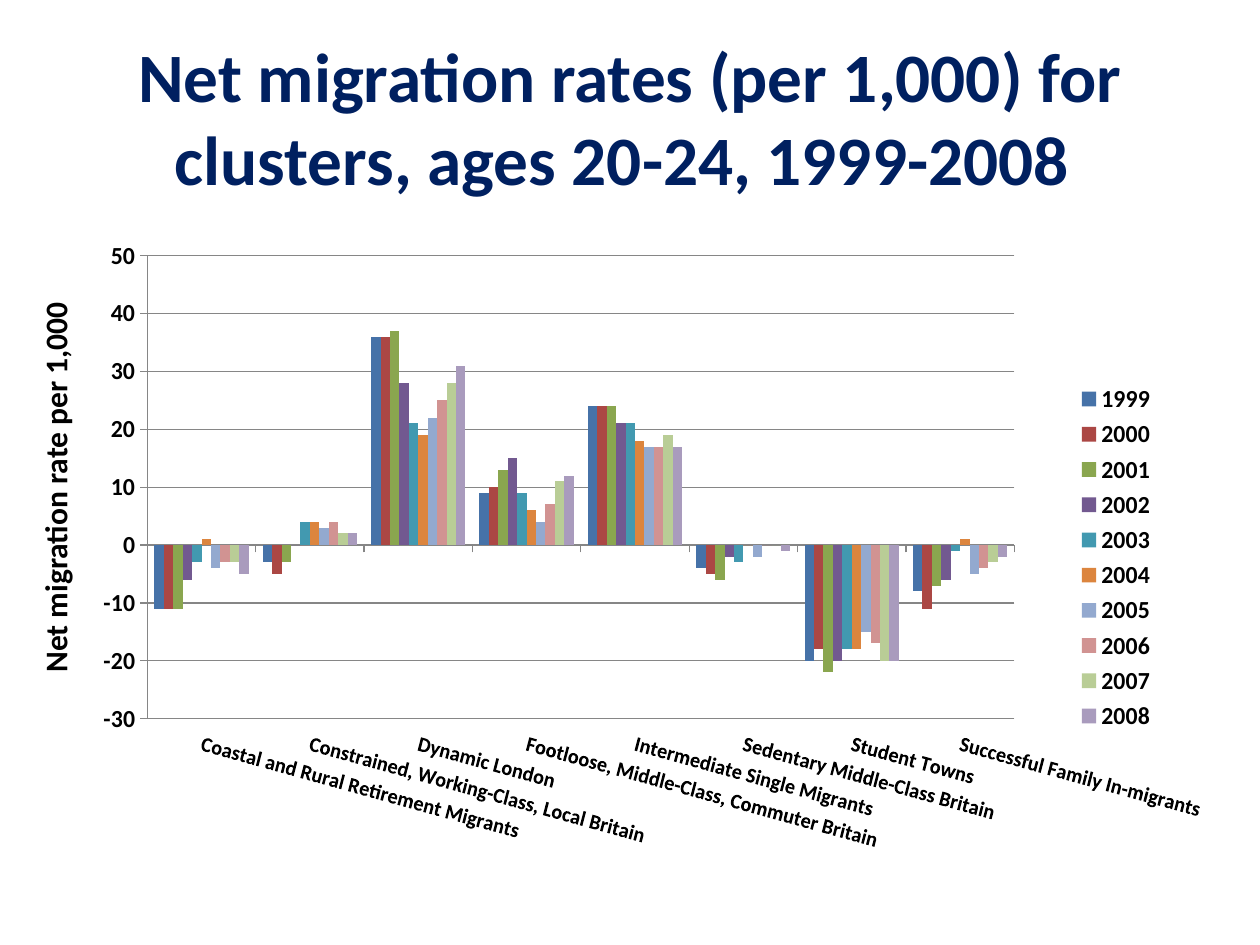
from dataclasses import dataclass

from lxml.etree import SubElement
from pptx import Presentation
from pptx.chart.chart import Chart
from pptx.chart.data import CategoryChartData
from pptx.dml.color import RGBColor
from pptx.enum.chart import XL_CHART_TYPE as ChartType
from pptx.enum.chart import XL_LEGEND_POSITION as LegendPos
from pptx.enum.chart import XL_TICK_LABEL_POSITION as LabelPos
from pptx.enum.chart import XL_TICK_MARK as Tick
from pptx.enum.text import MSO_ANCHOR as Anchor
from pptx.enum.text import PP_ALIGN as Align
from pptx.oxml.ns import qn
from pptx.util import Inches, Pt

WIDTH, HEIGHT = Inches(10), Inches(7.5)


@dataclass(frozen=True)
class Theme:
    font: str = "Calibri"
    title: str = "002060"
    text: str = "000000"
    line: str = "868686"
    title_size: float = 39.6
    axis_title_size: float = 18
    value_size: float = 14
    category_size: float = 12
    series: tuple[str, ...] = (
        "4672A8", "AB4744", "8AA64F", "725990", "4299B0",
        "DC853E", "93A9CF", "D19392", "B9CD96", "A99BBD",
    )


@dataclass(frozen=True)
class Box:
    """Left, top, width and height as shares of the slide."""
    x: float
    y: float
    w: float
    h: float

    def emu(self) -> tuple[int, ...]:
        return (int(self.x * WIDTH), int(self.y * HEIGHT),
                int(self.w * WIDTH), int(self.h * HEIGHT))


@dataclass(frozen=True)
class Label:
    text: str
    box: Box
    size: float
    color: str
    align: Align = Align.LEFT
    anchor: Anchor = Anchor.TOP
    rotation: float = 0
    wrap: bool = True


THEME = Theme()

LABELS = (
    Label("Net migration rates (per 1,000) for clusters, ages 20-24, 1999-2008 ",
          Box(0.05, 0.04, 0.9, 1 / 6), THEME.title_size, THEME.title,
          Align.CENTER, Anchor.MIDDLE),
    Label("Net migration rate per 1,000", Box(-0.115, 0.487, 0.317, 0.053),
          THEME.axis_title_size, THEME.text, rotation=270, wrap=False),
)

CHART_BOX = Box(0.055, 0.25, 0.9, 0.68)
PLOT = {"x": 0.071, "y": 0.03, "w": 0.789, "h": 0.721}  # shares of the chart

YEARS = range(1999, 2009)
CLUSTER_RATES = {  # one rate per year
    "Coastal and Rural Retirement Migrants": (-11, -11, -11, -6, -3, 1, -4, -3, -3, -5),
    "Constrained, Working-Class, Local Britain": (-3, -5, -3, 0, 4, 4, 3, 4, 2, 2),
    "Dynamic London": (36, 36, 37, 28, 21, 19, 22, 25, 28, 31),
    "Footloose, Middle-Class, Commuter Britain": (9, 10, 13, 15, 9, 6, 4, 7, 11, 12),
    "Intermediate Single Migrants": (24, 24, 24, 21, 21, 18, 17, 17, 19, 17),
    "Sedentary Middle-Class Britain": (-4, -5, -6, -2, -3, 0, -2, 0, 0, -1),
    "Student Towns": (-20, -18, -22, -20, -18, -18, -15, -17, -20, -20),
    "Successful Family In-migrants": (-8, -11, -7, -6, -1, 1, -5, -4, -3, -2),
}


def style_font(font, size: float, color: str = THEME.text) -> None:
    font.name, font.size, font.bold = THEME.font, Pt(size), True
    font.color.rgb = RGBColor.from_string(color)


def add_label(s, label: Label) -> None:
    sp = s.shapes.add_textbox(*label.box.emu())
    sp.rotation = label.rotation
    tf = sp.text_frame
    tf.word_wrap, tf.vertical_anchor = label.wrap, label.anchor
    p = tf.paragraphs[0]
    p.text, p.alignment = label.text, label.align
    style_font(p.font, label.size, label.color)


def fix_plot_area(chart: Chart) -> None:
    """Place the inner plot area by hand."""
    area = chart._chartSpace.chart.plotArea
    layout = area.find(qn("c:layout"))
    if layout is None:
        layout = area.makeelement(qn("c:layout"))
        area.insert(0, layout)
    manual = SubElement(layout, qn("c:manualLayout"))
    settings = {"layoutTarget": "inner", "xMode": "edge", "yMode": "edge", **PLOT}
    for tag, value in settings.items():
        SubElement(manual, qn(f"c:{tag}")).set("val", str(value))


def style_axes(chart: Chart) -> None:
    cat, val = chart.category_axis, chart.value_axis
    for axis, size in ((cat, THEME.category_size), (val, THEME.value_size)):
        axis.major_tick_mark, axis.minor_tick_mark = Tick.OUTSIDE, Tick.NONE
        style_font(axis.tick_labels.font, size)
        axis.format.line.color.rgb = RGBColor.from_string(THEME.line)
    # Slanted cluster names below the plot
    cat.tick_label_position = LabelPos.LOW
    slant = cat._element.find(qn("c:txPr")).find(qn("a:bodyPr"))
    slant.set("rot", str(15 * 60000))
    slant.set("vert", "horz")
    # Rate scale
    val.minimum_scale, val.maximum_scale, val.major_unit = -30, 50, 10
    val.tick_labels.number_format = "0"
    val.tick_labels.number_format_is_linked = False
    val.major_gridlines.format.line.color.rgb = RGBColor.from_string(THEME.line)


def add_rate_chart(s) -> None:
    data = CategoryChartData(number_format="0")
    data.categories = list(CLUSTER_RATES)
    for year, rates in zip(YEARS, zip(*CLUSTER_RATES.values())):
        data.add_series(str(year), rates)
    chart = s.shapes.add_chart(
        ChartType.COLUMN_CLUSTERED, *CHART_BOX.emu(), data).chart
    chart.has_title = False
    style_font(chart.font, 10)
    fix_plot_area(chart)
    style_axes(chart)

    # Bars
    plot = chart.plots[0]
    plot.gap_width, plot.overlap, plot.vary_by_categories = 150, 0, False
    for series, color in zip(plot.series, THEME.series):
        series.invert_if_negative = False
        series.format.fill.solid()
        series.format.fill.fore_color.rgb = RGBColor.from_string(color)

    # Legend of years
    chart.has_legend = True
    chart.legend.position = LegendPos.RIGHT
    chart.legend.include_in_layout = False
    style_font(chart.legend.font, THEME.value_size)


def main() -> None:
    prs = Presentation()
    prs.slide_width, prs.slide_height = WIDTH, HEIGHT
    s = prs.slides.add_slide(prs.slide_layouts[6])
    add_rate_chart(s)
    for label in LABELS:
        add_label(s, label)
    prs.save("out.pptx")


if __name__ == "__main__":
    main()
